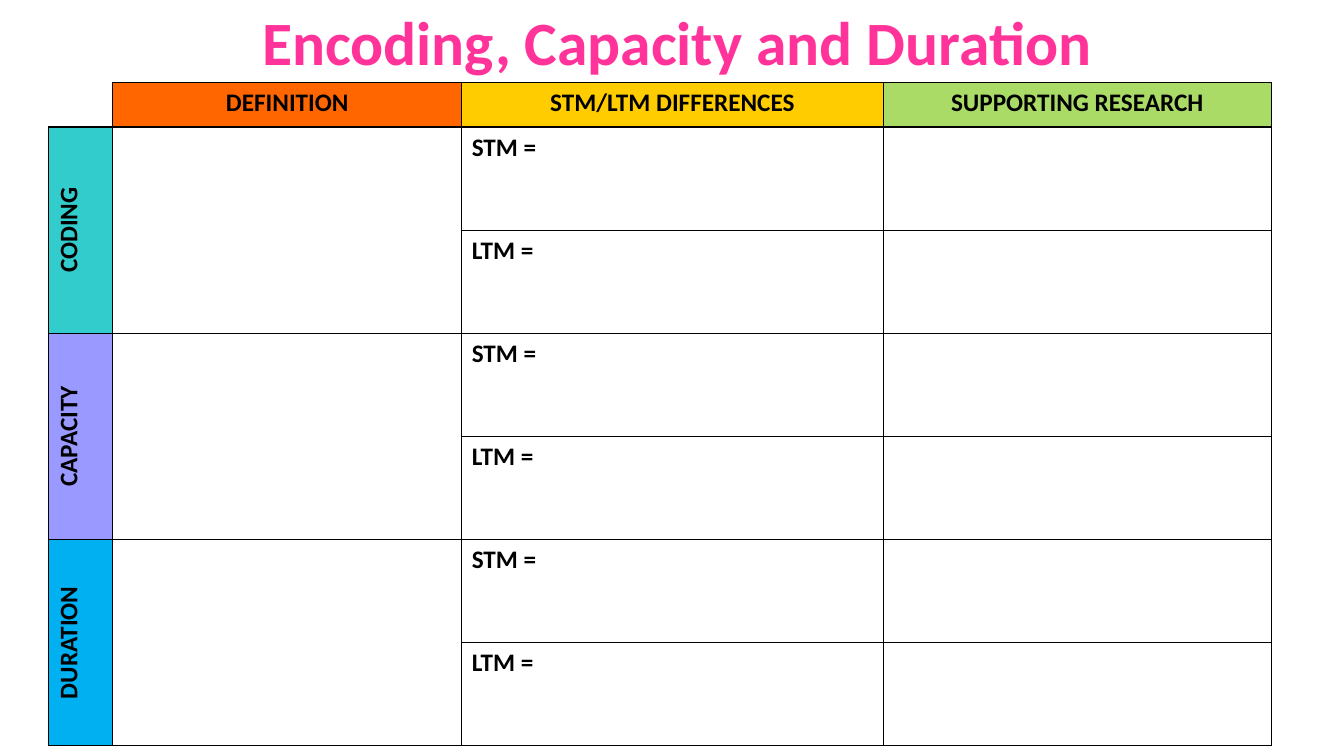
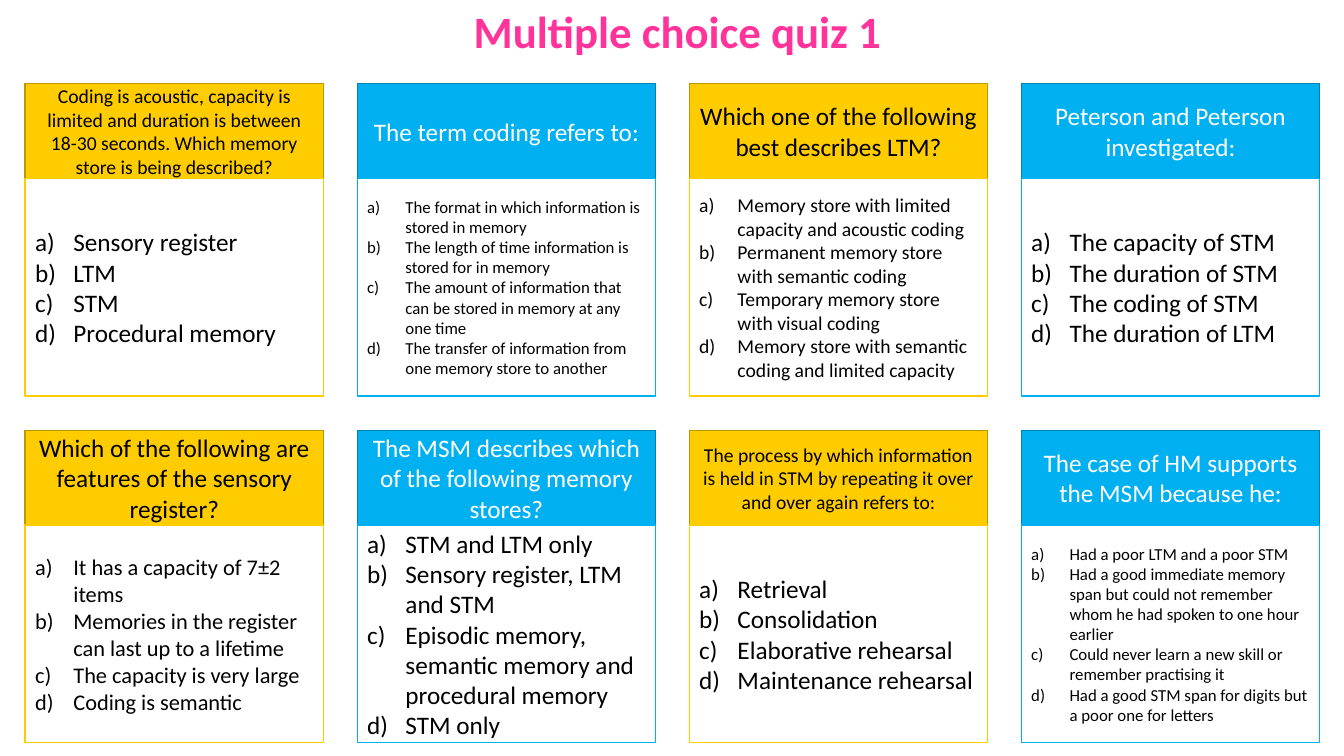
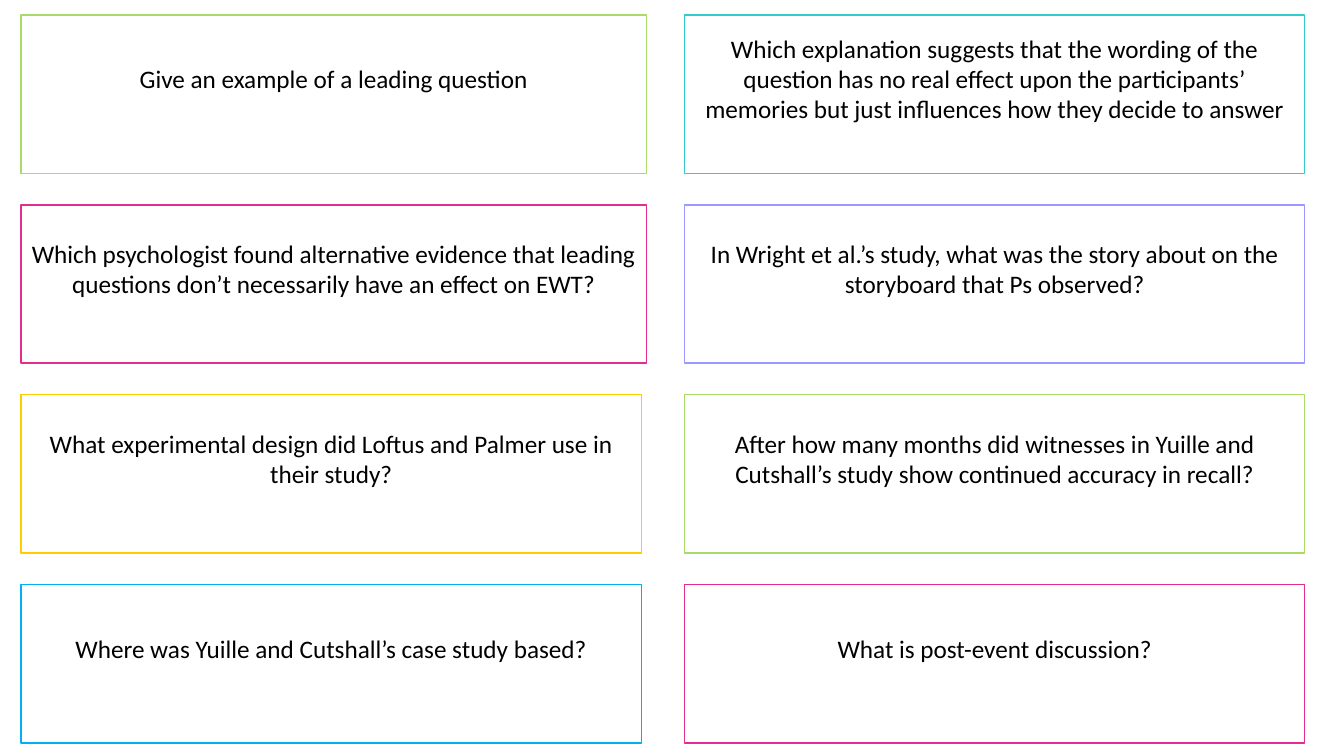
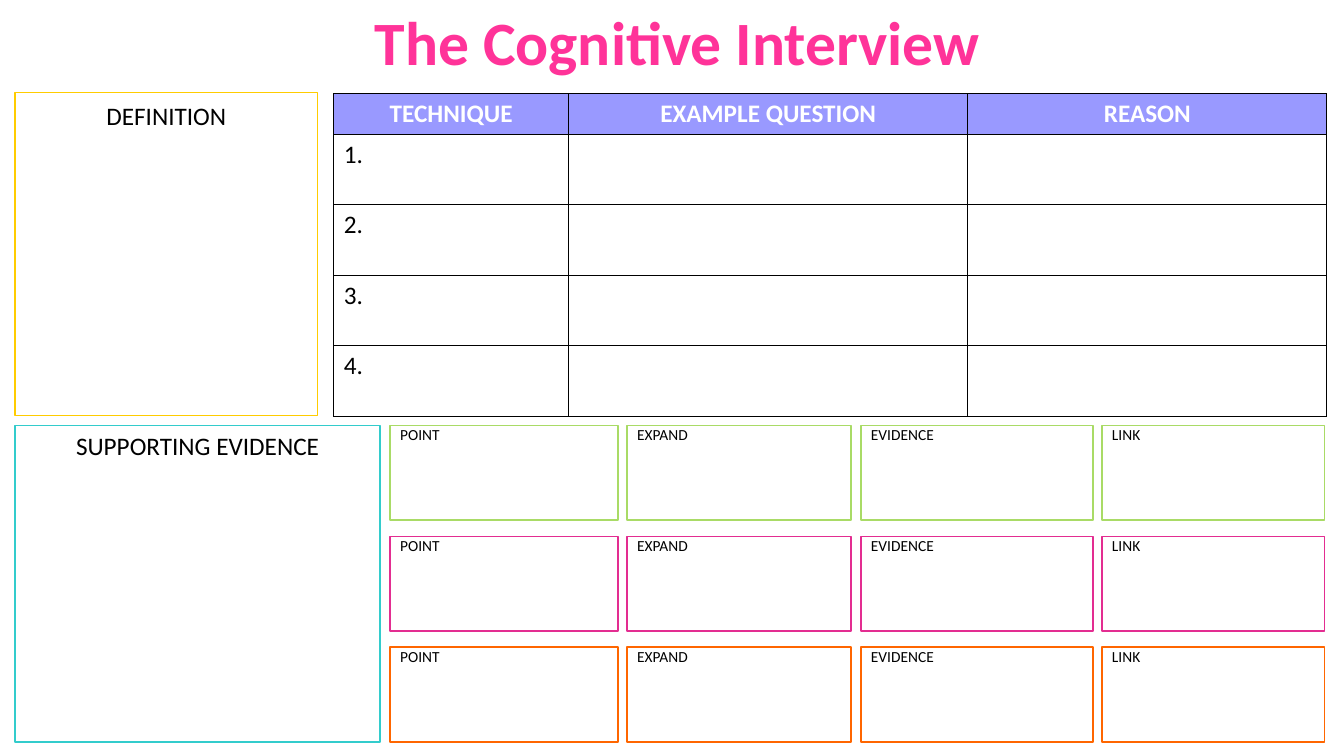
from lxml import etree
from pptx import Presentation
from pptx.dml.color import RGBColor
from pptx.enum import shapes, text
from pptx.oxml import ns
from pptx.util import Inches, Pt

FONT = "Calibri"
BLACK = RGBColor(0, 0, 0)
WHITE = RGBColor(255, 255, 255)
PINK = RGBColor(0xFF, 0x33, 0x99)
ROSE = RGBColor(0xE3, 0x2D, 0x91)
ORANGE = RGBColor(0xFF, 0x66, 0x00)
GOLD = RGBColor(0xFF, 0xCC, 0x00)
OCHRE = RGBColor(0xBD, 0x97, 0x00)
GREEN = RGBColor(0xA9, 0xDB, 0x66)
TEAL = RGBColor(0x33, 0xCC, 0xCC)
LILAC = RGBColor(0x99, 0x99, 0xFF)
BLUE = RGBColor(0x00, 0xB0, 0xF0)
NAVY = RGBColor(0x00, 0x82, 0xB2)

MID, TOP = text.MSO_ANCHOR.MIDDLE, text.MSO_ANCHOR.TOP
LEFT, CENTER = text.PP_ALIGN.LEFT, text.PP_ALIGN.CENTER

QUIZ = [  # question, its size, answers, their size
    ("Coding is acoustic, capacity is limited and duration is between 18-30 "
     "seconds. Which memory store is being described?", 14,
     ["Sensory register", "LTM", "STM", "Procedural memory"], 18),
    ("The term coding refers to:", 18,
     ["The format in which information is stored in memory",
      "The length of time information is stored for in memory",
      "The amount of information that can be stored in memory at any one time",
      "The transfer of information from one memory store to another"], 12),
    ("Which one of the following best describes LTM?", 18,
     ["Memory store with limited capacity and acoustic coding",
      "Permanent memory store with semantic coding",
      "Temporary memory store with visual coding",
      "Memory store with semantic coding and limited capacity"], 14),
    ("Peterson and Peterson investigated:", 18,
     ["The capacity of STM", "The duration of STM",
      "The coding of STM", "The duration of LTM"], 18),
    ("Which of the following are features of the sensory register?", 18,
     ["It has a capacity of 7±2 items",
      "Memories in the register can last up to a lifetime",
      "The capacity is very large", "Coding is semantic"], 16),
    ("The MSM describes which of the following memory stores?", 18,
     ["STM and LTM only", "Sensory register, LTM and STM",
      "Episodic memory, semantic memory and procedural memory",
      "STM only"], 18),
    ("The process by which information is held in STM by repeating it over "
     "and over again refers to:", 14,
     ["Retrieval", "Consolidation", "Elaborative rehearsal",
      "Maintenance rehearsal"], 18),
    ("The case of HM supports the MSM because he:", 18,
     ["Had a poor LTM and a poor STM",
      "Had a good immediate memory span but could not remember whom he had "
      "spoken to one hour earlier",
      "Could never learn a new skill or remember practising it",
      "Had a good STM span for digits but a poor one for letters"], 12),
]

PROMPTS = [  # left and right card of each row
    (("Give an example of a leading question", GREEN),
     ("Which explanation suggests that the wording of the question has no "
      "real effect upon the participants’ memories but just influences how "
      "they decide to answer", TEAL)),
    (("Which psychologist found alternative evidence that leading questions "
      "don’t necessarily have an effect on EWT?", ROSE),
     ("In Wright et al.’s study, what was the story about on the storyboard "
      "that Ps observed?", LILAC)),
    (("What experimental design did Loftus and Palmer use in their study?",
      GOLD),
     ("After how many months did witnesses in Yuille and Cutshall’s study "
      "show continued accuracy in recall?", GREEN)),
    (("Where was Yuille and Cutshall’s case study based?", BLUE),
     ("What is post-event discussion?", ROSE)),
]


# Text
def style(para, size, color=BLACK, bold=False, align=CENTER):
    para.alignment = align
    font = para.font
    font.name, font.size, font.bold = FONT, Pt(size), bold
    font.color.rgb = color


def letter(para):
    """Number the paragraph a), b), c) with a hanging indent."""
    props = para._p.get_or_add_pPr()
    props.set("marL", str(Inches(0.38)))
    props.set("indent", str(-Inches(0.38)))
    mark = etree.Element(ns.qn("a:buAutoNum"), type="alphaLcParenR")
    props.insert(0, mark)


def title(slide, words, width, size=44):
    height = 0.84 if size == 44 else 0.64
    box = slide.shapes.add_textbox(Inches(6.72 - width / 2), Inches(-0.01),
                                   Inches(width), Inches(height))
    frame = box.text_frame
    frame.word_wrap = False
    frame.auto_size = text.MSO_AUTO_SIZE.SHAPE_TO_FIT_TEXT
    frame.text = words
    style(frame.paragraphs[0], size, PINK, True)


# Outlined box with text
def card(slide, at, lines, edge, size=18, fill=WHITE, color=BLACK,
         align=CENTER, anchor=MID, top=0.05, base=0.05, listed=False):
    box = slide.shapes.add_shape(shapes.MSO_SHAPE.RECTANGLE,
                                 *(Inches(n) for n in at))
    box.shadow.inherit = False
    box.fill.solid()
    box.fill.fore_color.rgb = fill
    box.line.color.rgb = edge
    box.line.width = Pt(1)
    frame = box.text_frame
    frame.word_wrap = True
    frame.vertical_anchor = anchor
    frame.margin_top, frame.margin_bottom = Inches(top), Inches(base)
    frame.text = "\n".join(lines)
    for para in frame.paragraphs:
        if listed:
            letter(para)
        style(para, size, color, align=align)


# Table
def border(cell, sides="LRTB"):
    props = cell._tc.get_or_add_tcPr()
    for side in sides:
        line = etree.SubElement(props, ns.qn("a:ln" + side), w=str(Pt(1)))
        fill = etree.SubElement(line, ns.qn("a:solidFill"))
        etree.SubElement(fill, ns.qn("a:srgbClr"), val=str(BLACK))


def grid(slide, left, top, cols, rows):
    frame = slide.shapes.add_table(
        len(rows), len(cols), Inches(left), Inches(top),
        Inches(sum(cols)), Inches(sum(rows)))
    table = frame.table
    table.first_row = table.horz_banding = False
    for col, width in zip(table.columns, cols):
        col.width = Inches(width)
    for row, height in zip(table.rows, rows):
        row.height = Inches(height)
    for r in range(len(rows)):
        for c in range(len(cols)):
            cell = table.cell(r, c)
            border(cell, "RB" if left < 1 and r == c == 0 else "LRTB")
            cell.fill.background()
    return table


def put(cell, words, fill=None, color=BLACK, bold=True, align=CENTER):
    cell.text = words
    style(cell.text_frame.paragraphs[0], 18, color, bold, align)
    if fill is not None:
        cell.fill.solid()
        cell.fill.fore_color.rgb = fill


# Slides
def memory(slide):
    body = (6.58 - 0.44) / 6
    table = grid(slide, 0.48, 0.82, [0.64, 3.46, 4.18, 3.85],
                 [0.44] + [body] * 6)
    heads = [("DEFINITION", ORANGE), ("STM/LTM DIFFERENCES", GOLD),
             ("SUPPORTING RESEARCH", GREEN)]
    for c, (words, fill) in enumerate(heads, 1):
        put(table.cell(0, c), words, fill)
    topics = [("CODING", TEAL), ("CAPACITY", LILAC), ("DURATION", BLUE)]
    for i, (words, fill) in enumerate(topics):
        r = 1 + 2 * i
        for c in (0, 1):
            table.cell(r, c).merge(table.cell(r + 1, c))
        side = table.cell(r, 0)
        put(side, words, fill)
        side._tc.get_or_add_tcPr().set("vert", "vert270")
        for k, store in enumerate(("STM =", "LTM =")):
            put(table.cell(r + k, 2), store, align=LEFT)
    title(slide, "Encoding, Capacity and Duration", 8.52)


def quiz(slide):
    step = (10.13 - 0.25) / 3
    looks = [(GOLD, OCHRE, BLACK), (BLUE, NAVY, WHITE)]
    for i, (ask, big, answers, small) in enumerate(QUIZ):
        row, col = divmod(i, 4)
        x, y = 0.25 + col * step, 0.83 + row * 3.44
        fill, edge, color = looks[col % 2]
        card(slide, (x, y, 2.96, 0.94), [ask], edge, big, fill, color)
        card(slide, (x, y + 0.94, 2.96, 2.16), answers, fill, small,
             align=LEFT, listed=True)
    title(slide, "Multiple choice quiz 1", 4.28, 32)


def recall(slide):
    step = (5.8 - 0.15) / 3
    for r, pair in enumerate(PROMPTS):
        wide = 6.2 if r < 2 else 6.15
        for (words, edge), x, width in zip(pair, (0.21, 6.79), (wide, 6.15)):
            card(slide, (x, 0.15 + r * step, width, 1.57), [words], edge,
                 base=0.36)


def interview(slide):
    table = grid(slide, 3.31, 0.93, [2.33, 3.96, 3.56], [0.4] + [0.7] * 4)
    for c, words in enumerate(("TECHNIQUE", "EXAMPLE QUESTION", "REASON")):
        put(table.cell(0, c), words, LILAC, WHITE)
        for r in range(1, 5):
            put(table.cell(r, c), "" if c else f"{r}.", WHITE,
                bold=False, align=LEFT)
    title(slide, "The Cognitive Interview", 6.26)
    card(slide, (0.15, 0.92, 3, 3.2), ["DEFINITION"], GOLD,
         anchor=TOP, top=0.08)
    card(slide, (0.15, 4.22, 3.62, 3.14), ["SUPPORTING EVIDENCE"], TEAL,
         anchor=TOP)
    # Paragraph planner, one colour a row
    parts = [("POINT", 3.87, 2.26), ("EXPAND", 6.22, 2.22),
             ("EVIDENCE", 8.54, 2.3), ("LINK", 10.93, 2.21)]
    for r, edge in enumerate((GREEN, ROSE, ORANGE)):
        for words, x, width in parts:
            card(slide, (x, 4.22 + r * 1.1, width, 0.94), [words], edge, 11,
                 align=LEFT, anchor=TOP, top=0)


def main():
    deck = Presentation()
    deck.slide_width, deck.slide_height = Inches(13.33), Inches(7.5)
    for build in (memory, quiz, recall, interview):
        build(deck.slides.add_slide(deck.slide_layouts[6]))
    deck.save("out.pptx")


if __name__ == "__main__":
    main()
